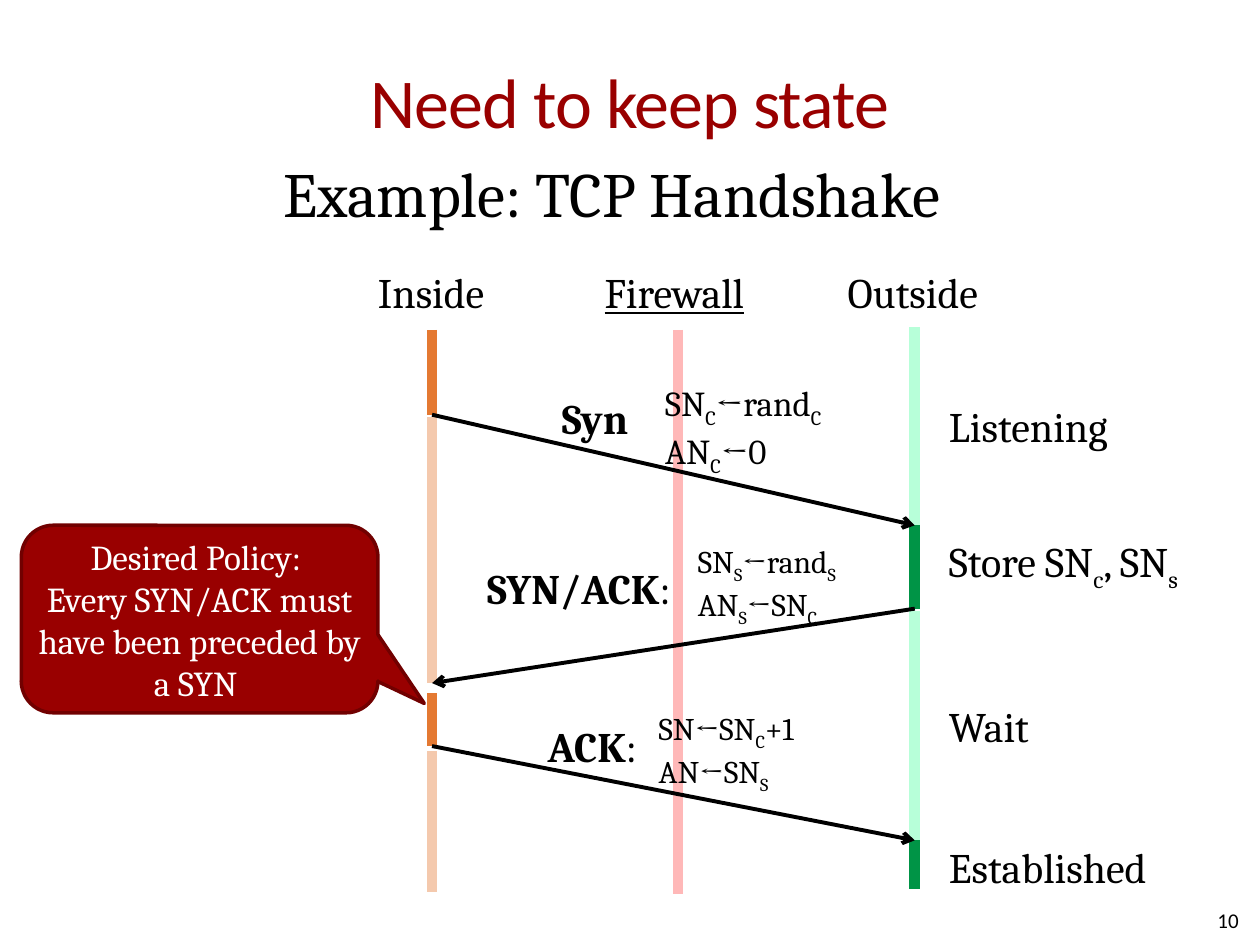
"""Build a slide showing the TCP handshake as seen by a stateful firewall."""
from dataclasses import dataclass

from lxml.etree import SubElement
from pptx import Presentation
from pptx.dml.color import RGBColor
from pptx.enum.shapes import MSO_CONNECTOR, MSO_SHAPE
from pptx.enum.text import MSO_ANCHOR, MSO_AUTO_SIZE, PP_ALIGN
from pptx.oxml.ns import qn
from pptx.shapes.connector import Connector
from pptx.slide import Slide
from pptx.text.text import TextFrame
from pptx.util import Cm, Pt

COLORS = {
    "text": "000000",
    "white": "FFFFFF",
    "title": "990000",
    "callout_border": "710000",
    "firewall": "FFB8B8",
    "inside_active": "E47932",
    "inside_idle": "F4C9AD",
    "outside_active": "009446",
    "outside_idle": "B7FFD9",
}
INSIDE_X, FIREWALL_X, OUTSIDE_X = 8.71, 13.67, 18.44
HEADING_Y, STATE_X = 5.38, 19.13
SYN_SENT, SYN_RECEIVED = 8.36, 10.59
REPLY_SENT, REPLY_RECEIVED = 12.27, 13.77
ACK_SENT, ACK_RECEIVED = 15.04, 16.94


@dataclass(frozen=True)
class Run:
    text: str
    bold: bool = False
    underline: bool = False
    subscript: bool = False


@dataclass(frozen=True)
class Label:
    left: float
    top: float
    width: float
    height: float
    lines: tuple[tuple[Run, ...], ...]
    size: float = 24
    font: str = "Cambria"
    color: str = "text"
    align: PP_ALIGN = PP_ALIGN.LEFT
    anchor: MSO_ANCHOR = MSO_ANCHOR.TOP
    wrap: bool = False
    padded: bool = False
    spacing: int = 0


@dataclass(frozen=True)
class Segment:
    x: float
    top: float
    bottom: float
    color: str


@dataclass(frozen=True)
class Message:
    start_x: float
    start_y: float
    end_x: float
    end_y: float


def subscripted(text: str) -> tuple[Run, ...]:
    """Split text into runs, lowering each character that follows an underscore."""
    first, *others = text.split("_")
    runs = [Run(first)]
    for part in others:
        runs.append(Run(part[0], subscript=True))
        if part[1:]:
            runs.append(Run(part[1:]))
    return tuple(runs)


def lines_of(*texts: str) -> tuple[tuple[Run, ...], ...]:
    """Turn each text into one line of runs."""
    return tuple(subscripted(text) for text in texts)


SEGMENTS = (
    Segment(INSIDE_X, 6.65, SYN_SENT, "inside_active"),
    Segment(INSIDE_X, 8.41, REPLY_RECEIVED, "inside_idle"),
    Segment(INSIDE_X, 13.97, ACK_SENT, "inside_active"),
    Segment(INSIDE_X, 15.14, 17.98, "inside_idle"),
    Segment(OUTSIDE_X, 6.6, SYN_RECEIVED, "outside_idle"),
    Segment(OUTSIDE_X, SYN_RECEIVED, REPLY_SENT, "outside_active"),
    Segment(OUTSIDE_X, 12.32, ACK_RECEIVED, "outside_idle"),
    Segment(OUTSIDE_X, ACK_RECEIVED, 17.93, "outside_active"),
)
MESSAGES = (
    Message(INSIDE_X, SYN_SENT, OUTSIDE_X, SYN_RECEIVED),
    Message(OUTSIDE_X, REPLY_SENT, INSIDE_X, REPLY_RECEIVED),
    Message(INSIDE_X, ACK_SENT, OUTSIDE_X, ACK_RECEIVED),
)
LABELS = (
    Label(1.27, 0.43, 22.86, 3.18, lines_of("Need to keep state"), 40, "Calibri", "title",
          PP_ALIGN.CENTER, MSO_ANCHOR.MIDDLE, wrap=True, spacing=-50),
    Label(19.05, 18.03, 5.92, 1.02, lines_of("10"), 12, "Calibri",
          align=PP_ALIGN.RIGHT, anchor=MSO_ANCHOR.MIDDLE, wrap=True),
    Label(5.72, 3.12, 13.97, 1.55, lines_of("Example: TCP Handshake"), 36),
    Label(7.62, HEADING_Y, 2.26, 1.02, lines_of("Inside")),
    Label(12.19, HEADING_Y, 3.02, 1.02, ((Run("Firewall", underline=True),),)),
    Label(17.09, HEADING_Y, 2.82, 1.02, lines_of("Outside")),
    Label(STATE_X, 8.08, 3.38, 1.02, lines_of("Listening")),
    Label(STATE_X, 10.8, 5, 1.02, lines_of("Store SN_c, SN_s")),
    Label(STATE_X, 14.12, 1.75, 1.02, lines_of("Wait")),
    Label(STATE_X, 16.97, 4.24, 1.02, lines_of("Established")),
    Label(11.33, 7.92, 1.4, 1.02, ((Run("Syn", bold=True),),)),
    Label(9.27, 11.2, 4.8, 1.27, ((Run("SYN/ACK", bold=True), Run(":")),),
          align=PP_ALIGN.CENTER, padded=True),
    Label(10.67, 14.4, 2.54, 1.27, ((Run("ACK", bold=True), Run(":")),),
          align=PP_ALIGN.CENTER, padded=True),
    Label(13.16, 7.57, 4.01, 1.96, lines_of("SN_C←rand_C", "AN_C←0"), 20, padded=True),
    Label(13.82, 10.8, 3.99, 1.96, lines_of("SN_S←rand_S", "AN_S←SN_C"), 18, padded=True),
    Label(13.03, 14.17, 4.14, 1.96, lines_of("SN←SN_C+1", "AN←SN_S"), 18, padded=True),
)
POLICY = Label(0.43, 10.59, 7.19, 3.78,
               lines_of("Desired Policy: ", "Every SYN/ACK must have been preceded by a SYN "),
               20, color="white", align=PP_ALIGN.CENTER, anchor=MSO_ANCHOR.MIDDLE, wrap=True)


def rgb(name: str) -> RGBColor:
    """Look up a named colour."""
    return RGBColor.from_string(COLORS[name])


def write_text(frame: TextFrame, label: Label) -> None:
    """Fill a text frame with the runs of a label."""
    frame.word_wrap = label.wrap
    frame.vertical_anchor = label.anchor
    frame.margin_left = frame.margin_right = Cm(0.25 if label.padded else 0)
    frame.margin_top = frame.margin_bottom = Cm(0.13 if label.padded else 0)
    for index, line in enumerate(label.lines):
        paragraph = frame.add_paragraph() if index else frame.paragraphs[0]
        paragraph.alignment = label.align
        for item in line:
            run = paragraph.add_run()
            run.text = item.text
            run.font.name = label.font
            run.font.size = Pt(label.size)
            run.font.color.rgb = rgb(label.color)
            run.font.bold = item.bold
            run.font.underline = item.underline
            properties = run.font._element
            if item.subscript:
                properties.set("baseline", "-25000")
            if label.spacing:
                properties.set("spc", str(label.spacing))


def draw_label(slide: Slide, label: Label) -> None:
    """Add a text box for a label."""
    shape = slide.shapes.add_textbox(
        Cm(label.left), Cm(label.top), Cm(label.width), Cm(label.height))
    write_text(shape.text_frame, label)
    if not label.wrap:
        shape.text_frame.auto_size = MSO_AUTO_SIZE.SHAPE_TO_FIT_TEXT


def draw_line(slide: Slide, start: tuple[float, float], end: tuple[float, float],
              color: str, width: float) -> Connector:
    """Add a straight line without a shadow."""
    connector = slide.shapes.add_connector(
        MSO_CONNECTOR.STRAIGHT, Cm(start[0]), Cm(start[1]), Cm(end[0]), Cm(end[1]))
    connector.line.color.rgb = rgb(color)
    connector.line.width = Pt(width)
    SubElement(connector._element.spPr, qn("a:effectLst"))
    return connector


def draw_segment(slide: Slide, segment: Segment) -> None:
    """Add one stretch of a vertical timeline."""
    draw_line(slide, (segment.x, segment.top), (segment.x, segment.bottom), segment.color, 6)


def draw_message(slide: Slide, message: Message) -> None:
    """Add the arrow of one handshake message."""
    connector = draw_line(slide, (message.start_x, message.start_y),
                          (message.end_x, message.end_y), "text", 2.25)
    SubElement(connector.line._get_or_add_ln(), qn("a:tailEnd"), type="arrow")


def draw_callout(slide: Slide, label: Label) -> None:
    """Add the policy callout pointing at the inside host."""
    shape = slide.shapes.add_shape(
        MSO_SHAPE.ROUNDED_RECTANGULAR_CALLOUT,
        Cm(label.left), Cm(label.top), Cm(label.width), Cm(label.height))
    for index, value in enumerate((0.63, 0.45, 0.17)):
        shape.adjustments[index] = value
    shape.shadow.inherit = False
    shape.fill.solid()
    shape.fill.fore_color.rgb = rgb("title")
    shape.line.color.rgb = rgb("callout_border")
    shape.line.width = Pt(2)
    write_text(shape.text_frame, label)


def main() -> None:
    """Build and save the presentation."""
    presentation = Presentation()
    presentation.slide_width, presentation.slide_height = Cm(25.4), Cm(19.05)
    slide = presentation.slides.add_slide(presentation.slide_layouts[6])
    draw_segment(slide, Segment(FIREWALL_X, 6.65, 18.03, "firewall"))
    for segment in SEGMENTS:
        draw_segment(slide, segment)
    for message in MESSAGES:
        draw_message(slide, message)
    for label in LABELS:
        draw_label(slide, label)
    draw_callout(slide, POLICY)
    presentation.save("out.pptx")


if __name__ == "__main__":
    main()
